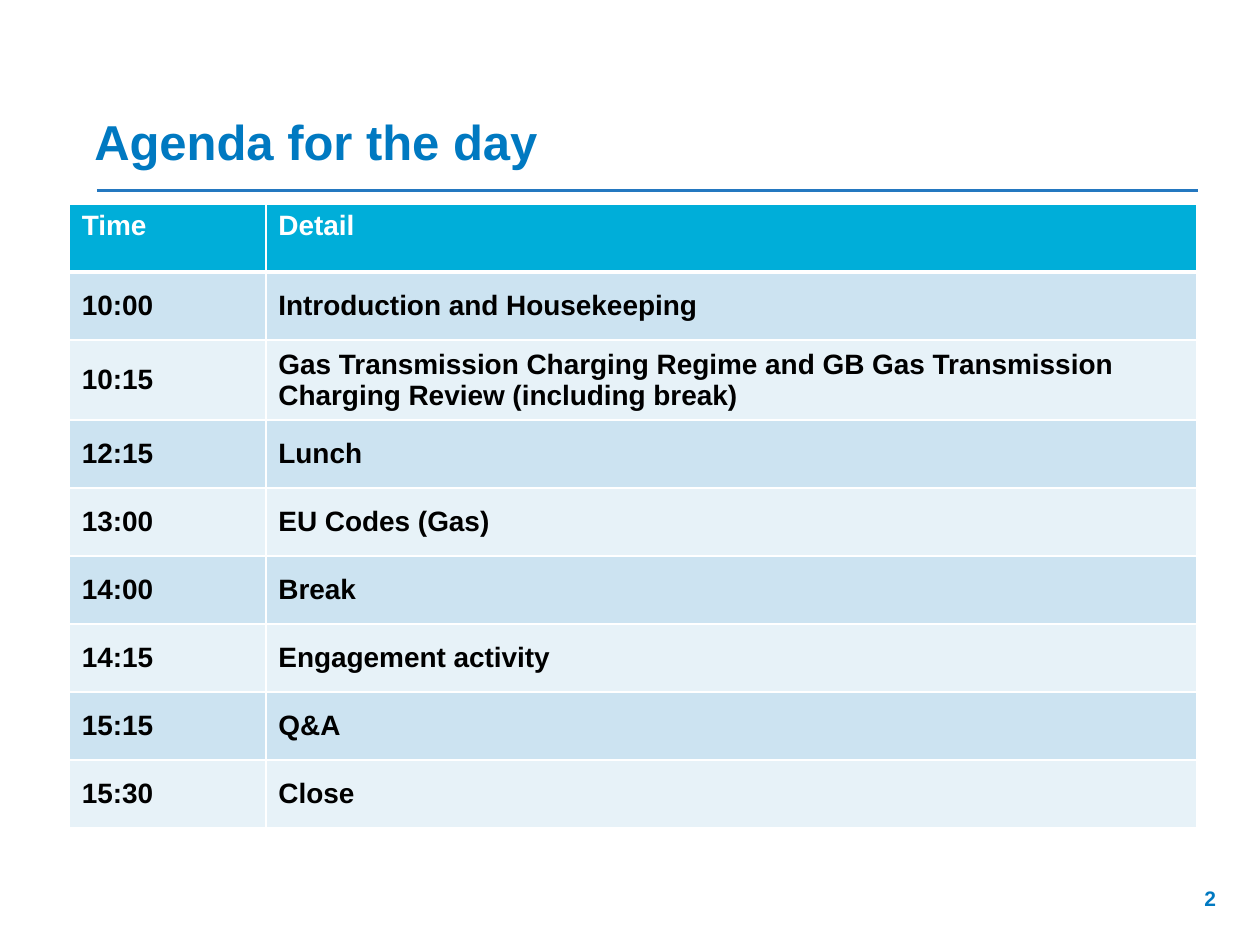
import pptx
import pptx.dml.color
import pptx.enum.shapes
import pptx.enum.text
import pptx.oxml
import pptx.oxml.ns
import pptx.util

Inches, Pt = pptx.util.Inches, pptx.util.Pt
ANCHOR = pptx.enum.text.MSO_ANCHOR
ALIGN = pptx.enum.text.PP_ALIGN
BLUE, WHITE, BLACK = "0079C1", "FFFFFF", "000000"
HEADER_FILL, BAND_FILLS = "00AED9", ("CCE3F1", "E7F2F8")
COLUMN_WIDTHS = (1.56, 7.39)
ROW_HEIGHT = 0.54
AGENDA = [
    ("Time", "Detail"),
    ("10:00", "Introduction and Housekeeping"),
    ("10:15", "Gas Transmission Charging Regime and GB Gas Transmission "
              "Charging Review (including break)"),
    ("12:15", "Lunch"),
    ("13:00", "EU Codes (Gas)"),
    ("14:00", "Break"),
    ("14:15", "Engagement activity"),
    ("15:15", "Q&A"),
    ("15:30", "Close"),
]


def rgb(value):
    return pptx.dml.color.RGBColor.from_string(value)


def write(text_frame, text, size, color, anchor, align=ALIGN.LEFT):
    """Fill a text frame with one bold Arial paragraph."""
    text_frame.text = text
    text_frame.word_wrap = True
    text_frame.vertical_anchor = anchor
    paragraph = text_frame.paragraphs[0]
    paragraph.alignment = align
    font = paragraph.runs[0].font
    font.name, font.size, font.bold = "Arial", Pt(size), True
    font.color.rgb = rgb(color)


presentation = pptx.Presentation()
presentation.slide_width, presentation.slide_height = Inches(10), Inches(7.5)
slide = presentation.slides.add_slide(presentation.slide_layouts[6])

# Title and the rule below it
title = slide.shapes.add_textbox(Inches(0.65), Inches(0.83), Inches(8.85), Inches(0.57))
write(title.text_frame, "Agenda for the day", 28, BLUE, ANCHOR.BOTTOM)

rule = slide.shapes.add_connector(
    pptx.enum.shapes.MSO_CONNECTOR.STRAIGHT,
    Inches(0.77), Inches(1.51), Inches(9.51), Inches(1.51))
rule.line.color.rgb = rgb("2478C0")
rule.line.width = Pt(1.5)
rule._element.spPr.append(pptx.oxml.parse_xml(
    f"<a:effectLst {pptx.oxml.ns.nsdecls('a')}/>"))

# Agenda table
table = slide.shapes.add_table(
    len(AGENDA), len(COLUMN_WIDTHS), Inches(0.55), Inches(1.62),
    Inches(sum(COLUMN_WIDTHS)), Inches(ROW_HEIGHT * len(AGENDA))).table
for column, width in zip(table.columns, COLUMN_WIDTHS):
    column.width = Inches(width)

for row_index, entries in enumerate(AGENDA):
    table.rows[row_index].height = Inches(ROW_HEIGHT)
    is_header = row_index == 0
    fill = HEADER_FILL if is_header else BAND_FILLS[(row_index - 1) % 2]
    for column_index, text in enumerate(entries):
        cell = table.cell(row_index, column_index)
        anchor = ANCHOR.TOP if is_header else ANCHOR.MIDDLE
        write(cell.text_frame, text, 16, WHITE if is_header else BLACK, anchor)
        cell.vertical_anchor = anchor
        properties = cell._tc.get_or_add_tcPr()
        for side in "LRTB":
            below_header = (row_index, side) in ((0, "B"), (1, "T"))
            properties.append(pptx.oxml.parse_xml(
                f'<a:ln{side} {pptx.oxml.ns.nsdecls("a")} w="{Pt(3 if below_header else 1)}">'
                f'<a:solidFill><a:srgbClr val="{WHITE}"/></a:solidFill></a:ln{side}>'))
        cell.fill.solid()
        cell.fill.fore_color.rgb = rgb(fill)

# Page number
page_number = slide.shapes.add_textbox(Inches(7.42), Inches(6.98), Inches(2.33), Inches(0.4))
write(page_number.text_frame, "2", 12, BLUE, ANCHOR.TOP, ALIGN.RIGHT)

presentation.save("out.pptx")
